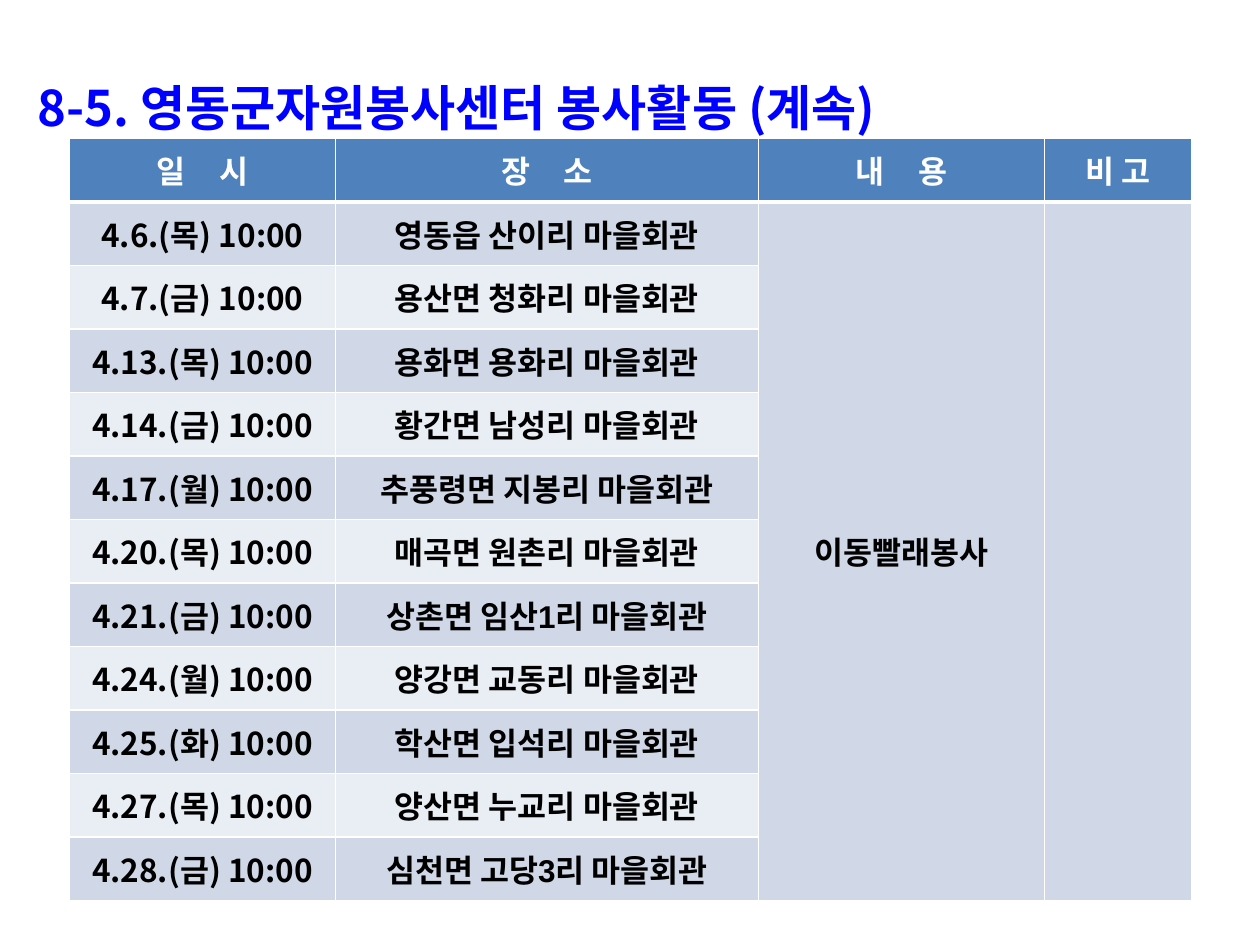
"""Build the volunteer centre schedule slide."""
from lxml import etree
from pptx import Presentation
from pptx.dml.color import RGBColor
from pptx.enum.text import MSO_ANCHOR, MSO_AUTO_SIZE, PP_ALIGN
from pptx.oxml.ns import qn
from pptx.util import Cm, Pt

MIDDLE = MSO_ANCHOR.MIDDLE
FIXED = MSO_AUTO_SIZE.NONE
LEFT, CENTER = PP_ALIGN.LEFT, PP_ALIGN.CENTER

BLUE = RGBColor(0x00, 0x00, 0xFF)
WHITE = RGBColor(0xFF, 0xFF, 0xFF)
BLACK = RGBColor(0x00, 0x00, 0x00)
HEAD = RGBColor(0x4F, 0x81, 0xBD)
BANDS = (RGBColor(0xE9, 0xED, 0xF4), RGBColor(0xD0, 0xD8, 0xE8))
ARIAL, NOTO = "Arial", "Noto Sans CJK KR"

TITLE = "8-5. 영동군자원봉사센터 봉사활동 (계속)"
HEADS = [("일 시", 7.5), ("장 소", 7.5), ("내 용", 7.5), ("비 고", 0)]
WORK = "이동빨래봉사"
VISITS = [
    ("4.6.(목)", "영동읍 산이리"),
    ("4.7.(금)", "용산면 청화리"),
    ("4.13.(목)", "용화면 용화리"),
    ("4.14.(금)", "황간면 남성리"),
    ("4.17.(월)", "추풍령면 지봉리"),
    ("4.20.(목)", "매곡면 원촌리"),
    ("4.21.(금)", "상촌면 임산1리"),
    ("4.24.(월)", "양강면 교동리"),
    ("4.25.(화)", "학산면 입석리"),
    ("4.27.(목)", "양산면 누교리"),
    ("4.28.(금)", "심천면 고당3리"),
]
WIDTHS = [5.36, 8.53, 5.77, 2.97]
ROW = 1.28


def style(para, name, size, color, align):
    para.alignment = align
    font = para.font
    font.name, font.size, font.bold = name, Pt(size), True
    font.color.rgb = color


def border(cell, side, width):
    line = etree.SubElement(cell._tc.get_or_add_tcPr(), qn(f"a:ln{side}"), w=str(Pt(width)))
    fill = etree.SubElement(line, qn("a:solidFill"))
    etree.SubElement(fill, qn("a:srgbClr"), val=str(WHITE))


def paint(cell, row, fill):
    for side in "LRTB":
        thick = (row, side) in ((0, "B"), (1, "T"))
        border(cell, side, 3 if thick else 1)
    cell.fill.solid()
    cell.fill.fore_color.rgb = fill
    cell.vertical_anchor = MIDDLE


def write(cell, text, name, color):
    cell.text = text
    para = cell.text_frame.paragraphs[0]
    style(para, name, 18, color, CENTER)
    return para


def add_title(slide):
    title = slide.shapes.title
    title.left, title.top, title.width, title.height = Cm(0.51), Cm(0.99), Cm(24.21), Cm(1.73)
    frame = title.text_frame
    frame.text = TITLE
    frame.word_wrap = True
    frame.auto_size = FIXED
    frame.vertical_anchor = MIDDLE
    para = frame.paragraphs[0]
    para.line_spacing = 1.5
    style(para, NOTO, 28, BLUE, LEFT)


def add_plan(slide):
    count = len(VISITS) + 1
    table = slide.shapes.add_table(
        count, len(WIDTHS), Cm(1.4), Cm(2.79), Cm(sum(WIDTHS)), Cm(ROW * count)
    ).table
    for col, width in zip(table.columns, WIDTHS):
        col.width = Cm(width)
    for i, row in enumerate(table.rows):
        row.height = Cm(ROW)
        for j, cell in enumerate(row.cells):
            band = BANDS[1] if j > 1 else BANDS[i % 2]
            paint(cell, i, band if i else HEAD)
    for j, (text, gap) in enumerate(HEADS):
        para = write(table.cell(0, j), text, ARIAL, WHITE)
        if gap:
            para.runs[0]._r.get_or_add_rPr().set("spc", str(int(gap * 100)))
    for i, (day, place) in enumerate(VISITS, 1):
        write(table.cell(i, 0), f"{day} 10:00", NOTO, BLACK)
        write(table.cell(i, 1), f"{place} 마을회관", ARIAL, BLACK)
    for j in (2, 3):
        table.cell(1, j).merge(table.cell(count - 1, j))
    write(table.cell(1, 2), WORK, NOTO, BLACK)


def main():
    deck = Presentation()
    deck.slide_width, deck.slide_height = Cm(25.4), Cm(19.05)
    slide = deck.slides.add_slide(deck.slide_layouts[5])
    add_title(slide)
    add_plan(slide)
    deck.save("out.pptx")


if __name__ == "__main__":
    main()
